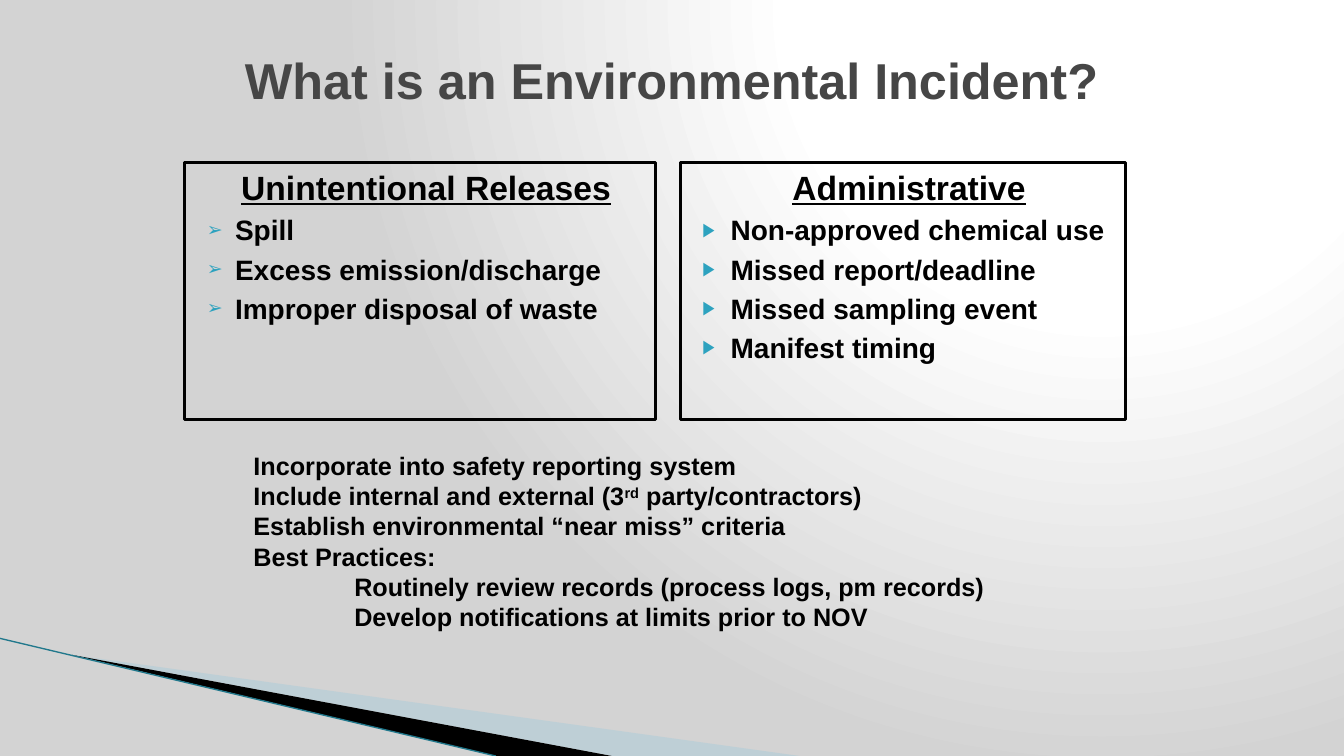
import lxml.etree
import pptx
import pptx.dml.color
import pptx.enum.shapes
import pptx.enum.text
import pptx.oxml.ns
import pptx.util

RGBColor = pptx.dml.color.RGBColor
PP_ALIGN = pptx.enum.text.PP_ALIGN
ANCHOR = pptx.enum.text.MSO_ANCHOR
qn = pptx.oxml.ns.qn

BLACK = RGBColor(0x00, 0x00, 0x00)
TITLE_GREY = RGBColor(0x46, 0x46, 0x46)
BULLET_BLUE = RGBColor(0x2D, 0xA2, 0xBF)
PALE_BLUE = RGBColor(0xA0, 0xCB, 0xDC)
TEAL = RGBColor(0x21, 0x78, 0x8C)
WHITE = RGBColor(0xFF, 0xFF, 0xFF)
EDGE_GREY = RGBColor(0xD3, 0xD3, 0xD3)

FONT = "Arial"
COLS, ROWS = 160, 90
CELL = pptx.util.Inches(1) // 12

TITLE_BOX = (26, 2, 108, 15)
RELEASES_BOX = (22, 19.3, 56, 30.7)
ADMIN_BOX = (81, 19.3, 53, 30.7)
PRACTICES_BOX = (29, 53, 90.2, 23)
SWOOSH_BOX = (0, 76, 95.2, 14)

RELEASES = ["Spill", "Excess emission/discharge", "Improper disposal of waste"]
ADMIN = ["Non-approved chemical use", "Missed report/deadline",
         "Missed sampling event", "Manifest timing"]
PRACTICES = [
    (0, ["Incorporate into safety reporting system"]),
    (0, ["Include internal and external (3", "rd", " party/contractors)"]),
    (0, ["Establish environmental “near miss” criteria"]),
    (0, ["Best Practices:"]),
    (12, ["Routinely review records (process logs, pm records)"]),
    (12, ["Develop notifications at limits prior to NOV"]),
]


def grid(*cells):
    """Convert grid cells to lengths."""
    return [pptx.util.Emu(round(c * CELL)) for c in cells]


def sub(parent, tag, **attrs):
    """Append a child element with the given attributes."""
    el = lxml.etree.SubElement(parent, qn(tag))
    for key, value in attrs.items():
        el.set(key, str(value))
    return el


def add_text(tf, parts, size, color=BLACK, align=PP_ALIGN.LEFT, underline=False,
             left=0, hang=0, before=0, bullet=None):
    """Add one paragraph whose odd-numbered parts are superscript."""
    p = tf.paragraphs[0]
    if p.runs:
        p = tf.add_paragraph()
    p.alignment = align
    p.space_before = pptx.util.Pt(before)
    pPr = p._p.get_or_add_pPr()
    margin, indent = grid(left, -hang)
    pPr.set("marL", str(int(margin)))
    pPr.set("indent", str(int(indent)))
    if bullet:
        sub(sub(pPr, "a:buClr"), "a:srgbClr", val=BULLET_BLUE)
        sub(pPr, "a:buSzPct", val=68000)
        sub(pPr, "a:buFont", typeface=FONT)
        sub(pPr, "a:buChar", char=bullet)
    for i, part in enumerate(parts):
        r = p.add_run()
        r.text = part
        r.font.name = FONT
        r.font.size = pptx.util.Pt(size)
        r.font.bold = True
        r.font.underline = underline
        r.font.color.rgb = color
        if i % 2:
            r._r.get_or_add_rPr().set("baseline", "30000")


def add_background(slide):
    """Fill the slide with a radial gradient from white to grey."""
    bg = lxml.etree.Element(qn("p:bg"))
    bgPr = sub(bg, "p:bgPr")
    grad = sub(bgPr, "a:gradFill", rotWithShape=1)
    stops = sub(grad, "a:gsLst")
    for pos, color in [(0, WHITE), (40, WHITE), (100, EDGE_GREY)]:
        sub(sub(stops, "a:gs", pos=pos * 1000), "a:srgbClr", val=color)
    sub(sub(grad, "a:path", path="circle"), "a:fillToRect", l=65000, t=0, r=0, b=98000)
    sub(bgPr, "a:effectLst")
    slide._element.find(qn("p:cSld")).insert(0, bg)


def add_blade(slide, points, color, opacity=100):
    """Draw a filled outline through grid points."""
    start, *rest = [grid(*point) for point in points]
    builder = slide.shapes.build_freeform(*start)
    builder.add_line_segments(rest, close=True)
    sp = builder.convert_to_shape()
    sp.shadow.inherit = False
    sp.fill.solid()
    sp.fill.fore_color.rgb = color
    sp.line.fill.background()
    if opacity < 100:
        sub(sp._element.spPr.find(".//" + qn("a:srgbClr")), "a:alpha", val=opacity * 1000)


def add_swoosh(slide, box):
    """Draw the blades and the thin line in the bottom corner."""
    x, y, w, h = box
    bottom = y + h
    tip = (x + 0.09 * w, y + 0.14 * h)
    add_blade(slide, [tip, (x + w, bottom), (x + 0.765 * w, bottom)], PALE_BLUE, 40)
    add_blade(slide, [tip, (x + 0.765 * w, bottom), (x + 0.62 * w, bottom)], BLACK)
    line = slide.shapes.add_connector(pptx.enum.shapes.MSO_CONNECTOR.STRAIGHT,
                                      *grid(x, y, x + 0.62 * w, bottom))
    line.line.color.rgb = TEAL
    line.line.width = pptx.util.Pt(0.95)
    sub(line._element.spPr, "a:effectLst")


def add_title(slide, box, text):
    """Place the centred slide title."""
    tf = slide.shapes.add_textbox(*grid(*box)).text_frame
    tf.word_wrap = True
    tf.vertical_anchor = ANCHOR.MIDDLE
    add_text(tf, [text], 36, TITLE_GREY, PP_ALIGN.CENTER)


def add_panel(slide, box, heading, items, bullet):
    """Place an outlined panel with a heading and a bullet list."""
    sp = slide.shapes.add_shape(pptx.enum.shapes.MSO_SHAPE.RECTANGLE, *grid(*box))
    sp.shadow.inherit = False
    sp.fill.background()
    sp.line.color.rgb = BLACK
    sp.line.width = pptx.util.Pt(2.25)
    sub(sp._element.spPr.find(qn("a:ln")), "a:round")
    tf = sp.text_frame
    tf.word_wrap = True
    tf.vertical_anchor = ANCHOR.TOP
    add_text(tf, [heading], 24, align=PP_ALIGN.CENTER, underline=True, left=1.44)
    for item in items:
        add_text(tf, [item], 20, left=4.8, hang=3.36, before=4, bullet=bullet)


def add_practices(slide, box, lines):
    """Place the reporting advice with its indented practices."""
    tf = slide.shapes.add_textbox(*grid(*box)).text_frame
    tf.word_wrap = True
    for left, parts in lines:
        add_text(tf, parts, 18, left=left)


def main():
    """Build the slide and save it."""
    prs = pptx.Presentation()
    prs.slide_width, prs.slide_height = grid(COLS, ROWS)
    slide = prs.slides.add_slide(prs.slide_layouts[6])
    add_background(slide)
    add_swoosh(slide, SWOOSH_BOX)
    add_panel(slide, RELEASES_BOX, "Unintentional Releases", RELEASES, "➢")
    add_panel(slide, ADMIN_BOX, "Administrative", ADMIN, "▶")
    add_title(slide, TITLE_BOX, "What is an Environmental Incident?")
    add_practices(slide, PRACTICES_BOX, PRACTICES)
    prs.save("out.pptx")


if __name__ == "__main__":
    main()
